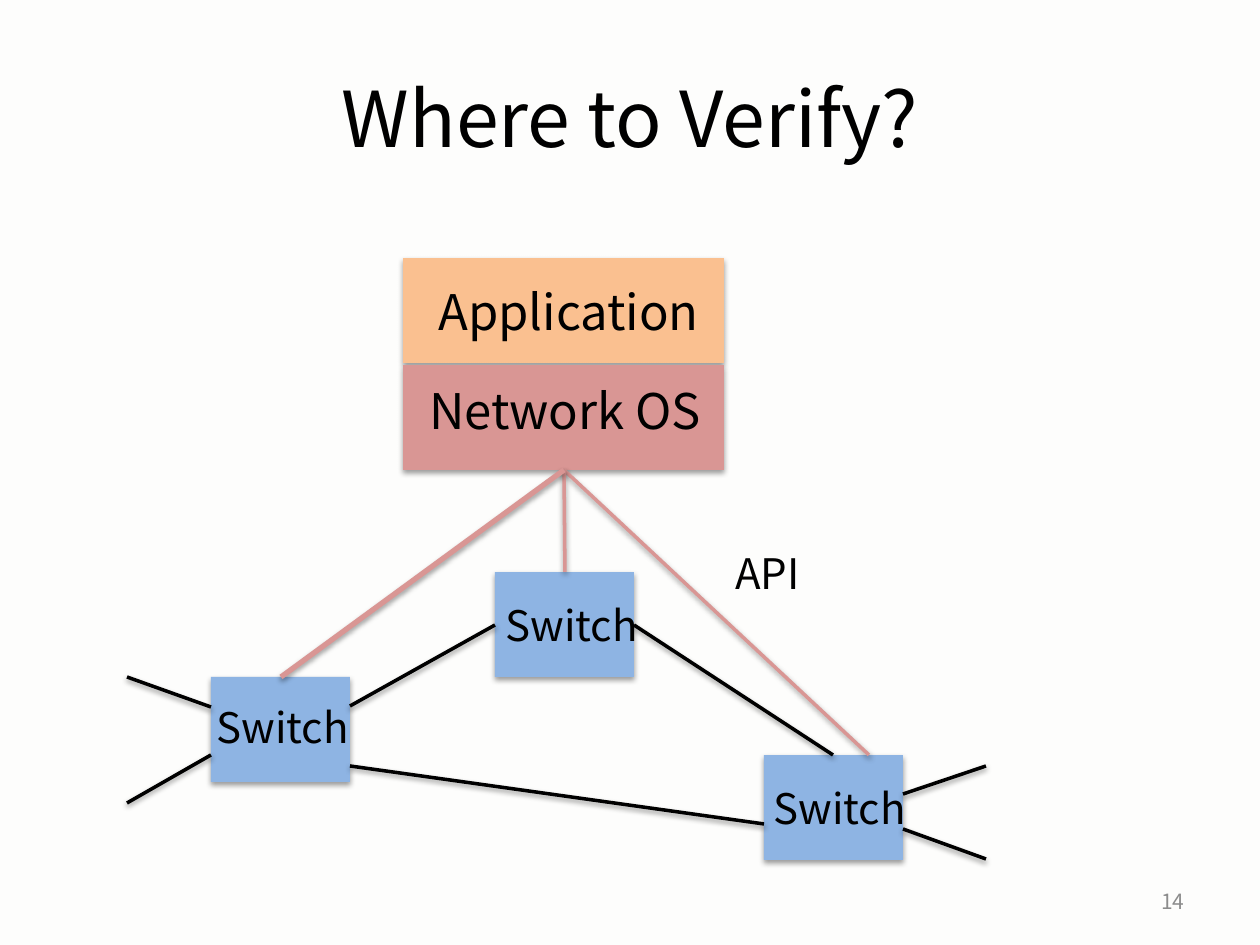
from lxml import etree
from pptx import Presentation
from pptx.dml.color import RGBColor
from pptx.enum.shapes import MSO_CONNECTOR, MSO_SHAPE
from pptx.enum.text import MSO_ANCHOR, PP_ALIGN
from pptx.oxml.ns import qn
from pptx.util import Pt

RECT, STRAIGHT = MSO_SHAPE.RECTANGLE, MSO_CONNECTOR.STRAIGHT
LEFT, CENTER, RIGHT = PP_ALIGN.LEFT, PP_ALIGN.CENTER, PP_ALIGN.RIGHT
TOP, MIDDLE = MSO_ANCHOR.TOP, MSO_ANCHOR.MIDDLE

SCALE = 914400 / 126  # EMU per px
FONT = "Noto Sans CJK JP"
BACKGROUND, BLACK, GREY = "FDFDFC", "000000", "8C8C8C"
ORANGE, ROSE, BLUE = "FAC090", "D99694", "8EB4E3"

LAYER_SIZE, SWITCH_SIZE = (321, 105), (139, 105)
LAYER_LABEL, SWITCH_LABEL = (306, 72), (175, 63)

# box position, label position, label
LAYERS = [
    ((403, 258), (426, 275), "Application", ORANGE),
    ((403, 365), (417, 374), "Network OS", ROSE),
]
SWITCHES = [
    ((211, 677), (204, 695), "Switch"),
    ((495, 572), (493, 593), "Switch"),
    ((764, 755), (761, 776), "Switch"),
]
NETWORK_LINKS = [
    ((350, 706), (495, 625)),
    ((634, 625), (833, 755)),
    ((350, 766), (764, 824)),
    ((127, 803), (211, 755)),
    ((127, 677), (211, 707)),
    ((903, 829), (986, 859)),
    ((903, 794), (986, 766)),
]
CONTROLLER = (564, 470)
# switch end, width in points
API_LINKS = [((869, 755), 2), ((565, 572), 2), ((281, 677), 3)]


def px(*values):
    return [round(v * SCALE) for v in values]


def rgb(color):
    return RGBColor.from_string(color)


def add_shadow(s):
    """Give a shape or line a soft shadow below; call after fill and line are set."""
    effects = etree.SubElement(s._element.spPr, qn("a:effectLst"))
    shadow = etree.SubElement(effects, qn("a:outerShdw"), blurRad="40000",
                              dist="20000", dir="5400000", rotWithShape="0")
    color = etree.SubElement(shadow, qn("a:srgbClr"), val=BLACK)
    etree.SubElement(color, qn("a:alpha"), val="38000")


def add_text(text, at, size, color=BLACK, align=LEFT, anchor=TOP):
    tf = slide.shapes.add_textbox(*px(*at)).text_frame
    tf.word_wrap = True
    tf.vertical_anchor = anchor
    p = tf.paragraphs[0]
    p.alignment = align
    r = p.add_run()
    r.text = text
    r.font.name, r.font.size = FONT, Pt(size)
    r.font.color.rgb = rgb(color)


def add_box(position, size, color):
    s = slide.shapes.add_shape(RECT, *px(*position, *size))
    s.fill.solid()
    s.fill.fore_color.rgb = rgb(color)
    s.line.fill.background()
    add_shadow(s)


def add_link(start, end, color, width=2):
    s = slide.shapes.add_connector(STRAIGHT, *px(*start, *end))
    s.line.color.rgb = rgb(color)
    s.line.width = Pt(width)
    add_shadow(s)


prs = Presentation()
prs.slide_width, prs.slide_height = px(1260, 945)
slide = prs.slides.add_slide(prs.slide_layouts[6])
slide.background.fill.solid()
slide.background.fill.fore_color.rgb = rgb(BACKGROUND)

add_text("Where to Verify?", (63, 38, 1134, 157), 44, align=CENTER, anchor=MIDDLE)
add_text("14", (903, 876, 294, 50), 12, color=GREY, align=RIGHT, anchor=MIDDLE)

for position, _, _, color in LAYERS:
    add_box(position, LAYER_SIZE, color)
for position, _, _ in SWITCHES:
    add_box(position, SWITCH_SIZE, BLUE)

for start, end in NETWORK_LINKS:
    add_link(start, end, BLACK)
for end, width in API_LINKS:
    add_link(CONTROLLER, end, ROSE, width)

for _, position, label, _ in LAYERS:
    add_text(label, (*position, *LAYER_LABEL), 28)
for _, position, label in SWITCHES:
    add_text(label, (*position, *SWITCH_LABEL), 24)
add_text("API", (723, 541, 100, 63), 24)

prs.save("out.pptx")
